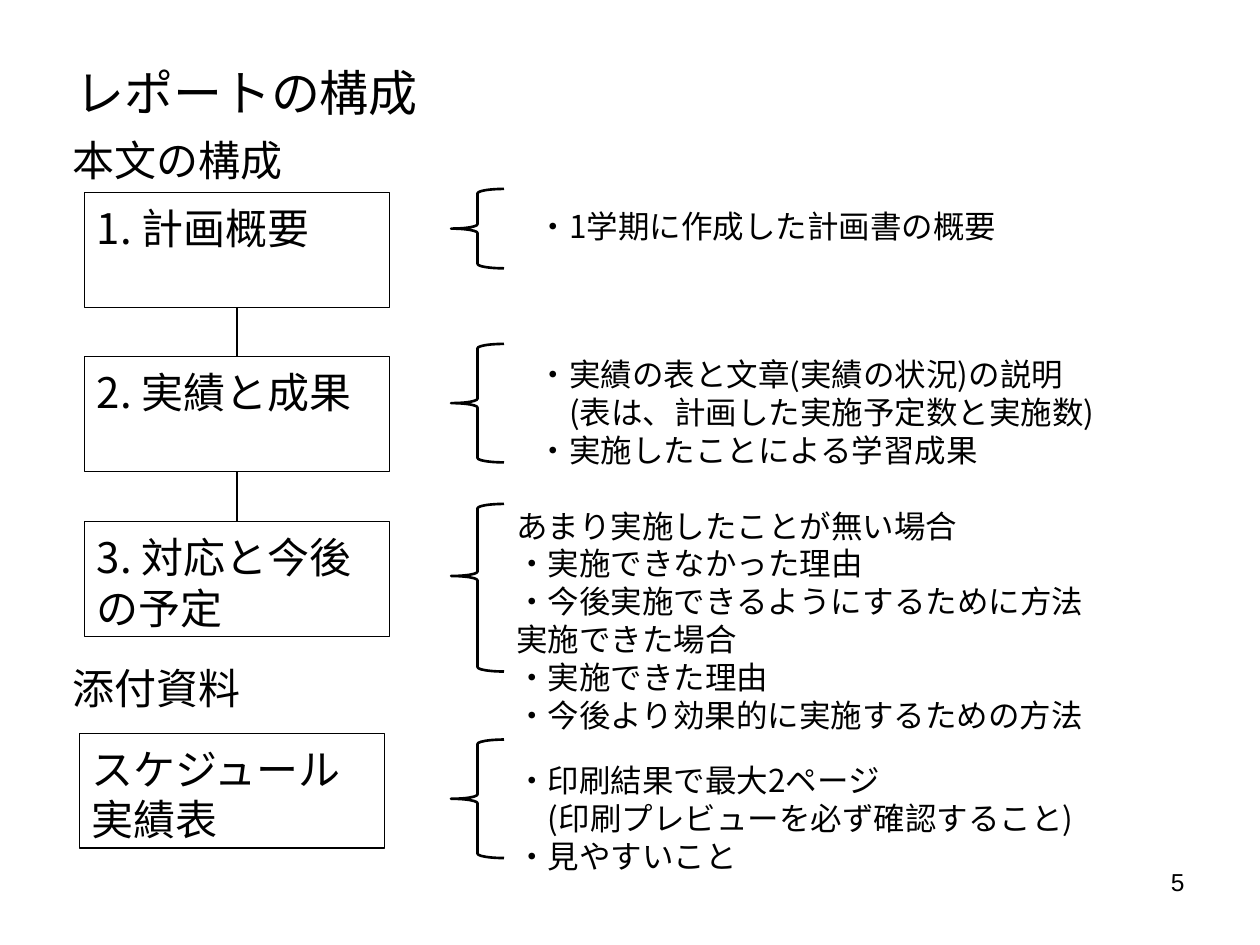
from lxml import etree
from pptx import Presentation
from pptx.enum import shapes, text
from pptx.dml.color import RGBColor
from pptx.oxml import ns
from pptx.util import Inches, Pt

COLORS = {"ink": "000000", "paper": "FFFFFF"}
JAPANESE, LATIN = "Noto Sans CJK JP", "Arial"
LINE_PITCH = 1.2  # line height as a multiple of the text size
BOX_W, BOX_H = 2.42, 0.91
BRACE_X, BRACE_W = 3.58, 0.42

HEADINGS = [(0.99, "本文の構成"), (5.18, "添付資料")]

# Left, top, label
SECTIONS = [
    (0.67, 1.53, "1. 計画概要"),
    (0.67, 2.83, "2. 実績と成果"),
    (0.67, 4.14, "3. 対応と今後の予定"),
    (0.63, 5.82, "スケジュール実績表"),
]

# Brace top, height, position of the point
BRACES = [(1.5, 0.63, 0.5), (2.73, 0.94, 0.5), (4, 1.33, 0.43), (5.87, 0.94, 0.5)]

# Left, top, width, height, lines
DETAILS = [
    (4.17, 1.56, 4.17, 0.4, ["・1学期に作成した計画書の概要"]),
    (4.17, 2.74, 5.02, 1.01, [
        "・実績の表と文章(実績の状況)の説明",
        "　(表は、計画した実施予定数と実施数)",
        "・実施したことによる学習成果",
    ]),
    (4, 3.94, 5.02, 2.22, [
        "あまり実施したことが無い場合",
        "・実施できなかった理由",
        "・今後実施できるようにするために方法",
        "実施できた場合",
        "・実施できた理由",
        "・今後より効果的に実施するための方法",
    ]),
    (4, 5.96, 5.02, 1.01, [
        "・印刷結果で最大2ページ",
        "　(印刷プレビューを必ず確認すること)",
        "・見やすいこと",
    ]),
]


def color(name):
    return RGBColor.from_string(COLORS[name])


def set_line(line, width):
    line.color.rgb = color("ink")
    line.width = Pt(width)


def write_japanese(shape, lines, size):
    frame = shape.text_frame
    frame.word_wrap = True
    frame.vertical_anchor = text.MSO_ANCHOR.TOP
    frame.margin_top = Inches(0.08)
    frame.text = "\n".join(lines)
    for paragraph in frame.paragraphs:
        paragraph.alignment = text.PP_ALIGN.LEFT
        paragraph.line_spacing = Pt(round(size * LINE_PITCH, 1))
        font = paragraph.font
        font.size, font.name = Pt(size), JAPANESE
        font.color.rgb = color("ink")
        # East Asian characters take their own typeface
        properties = paragraph._p.pPr.find(ns.qn("a:defRPr"))
        etree.SubElement(properties, ns.qn("a:ea"), typeface=JAPANESE)


def add_label(slide, x, y, w, h, lines, size):
    label = slide.shapes.add_textbox(Inches(x), Inches(y), Inches(w), Inches(h))
    write_japanese(label, lines, size)


def add_outline(slide, preset, x, y, w, h, width):
    outline = slide.shapes.add_shape(preset, Inches(x), Inches(y), Inches(w), Inches(h))
    outline.shadow.inherit = False
    outline.fill.background()
    set_line(outline.line, width)
    return outline


def add_section(slide, x, y, label):
    box = add_outline(slide, shapes.MSO_SHAPE.RECTANGLE, x, y, BOX_W, BOX_H, 0.75)
    write_japanese(box, [label], 24)


def add_brace(slide, y, h, point):
    brace = add_outline(slide, shapes.MSO_SHAPE.LEFT_BRACE, BRACE_X, y, BRACE_W, h, 1.5)
    brace.adjustments[0] = 0.083
    brace.adjustments[1] = point


def add_link(slide, x, top, bottom):
    link = slide.shapes.add_connector(
        shapes.MSO_CONNECTOR.STRAIGHT, Inches(x), Inches(top), Inches(x), Inches(bottom))
    set_line(link.line, 1.5)
    etree.SubElement(link._element.spPr, ns.qn("a:effectLst"))


def add_page_number(slide, number):
    page = slide.shapes.add_textbox(Inches(7.17), Inches(6.83), Inches(2.33), Inches(0.52))
    page.text_frame.word_wrap = True
    page.text_frame.text = number
    paragraph = page.text_frame.paragraphs[0]
    paragraph.alignment = text.PP_ALIGN.RIGHT
    paragraph.font.size, paragraph.font.name = Pt(14), LATIN
    paragraph.font.color.rgb = color("ink")


def main():
    deck = Presentation()
    deck.slide_width, deck.slide_height = Inches(10), Inches(7.5)
    slide = deck.slides.add_slide(deck.slide_layouts[6])
    slide.background.fill.solid()
    slide.background.fill.fore_color.rgb = color("paper")

    # Title and headings
    add_page_number(slide, "5")
    add_label(slide, 0.5, 0.42, 7.83, 0.57, ["レポートの構成"], 28)
    for y, heading in HEADINGS:
        add_label(slide, 0.48, y, 2.13, 0.5, [heading], 24)

    # Report sections, the first three joined in order
    for section in SECTIONS:
        add_section(slide, *section)
    body = SECTIONS[:3]
    for (x, upper, _), (_, lower, _) in zip(body, body[1:]):
        add_link(slide, x + BOX_W / 2, upper + BOX_H, lower)

    # Braces and what each section holds
    for brace in BRACES:
        add_brace(slide, *brace)
    for x, y, w, h, lines in DETAILS:
        add_label(slide, x, y, w, h, lines, 18)

    deck.save("out.pptx")


if __name__ == "__main__":
    main()
